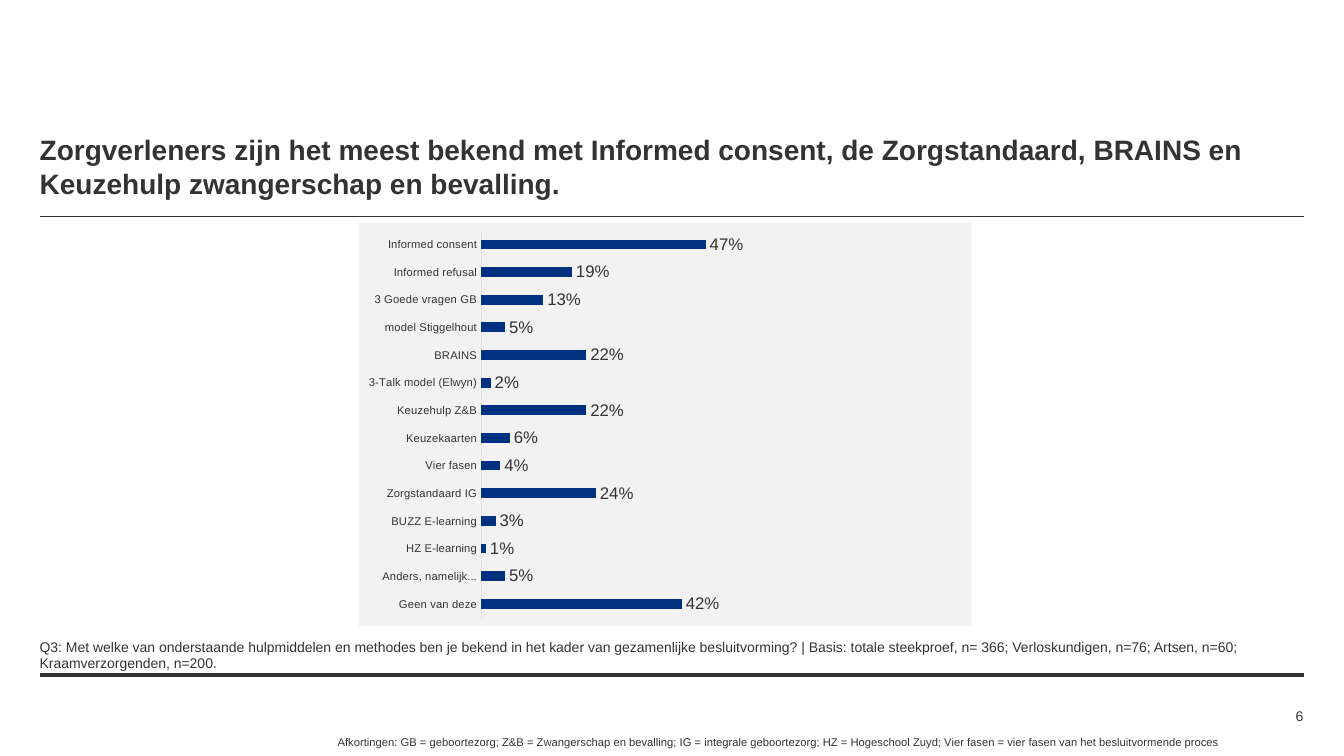
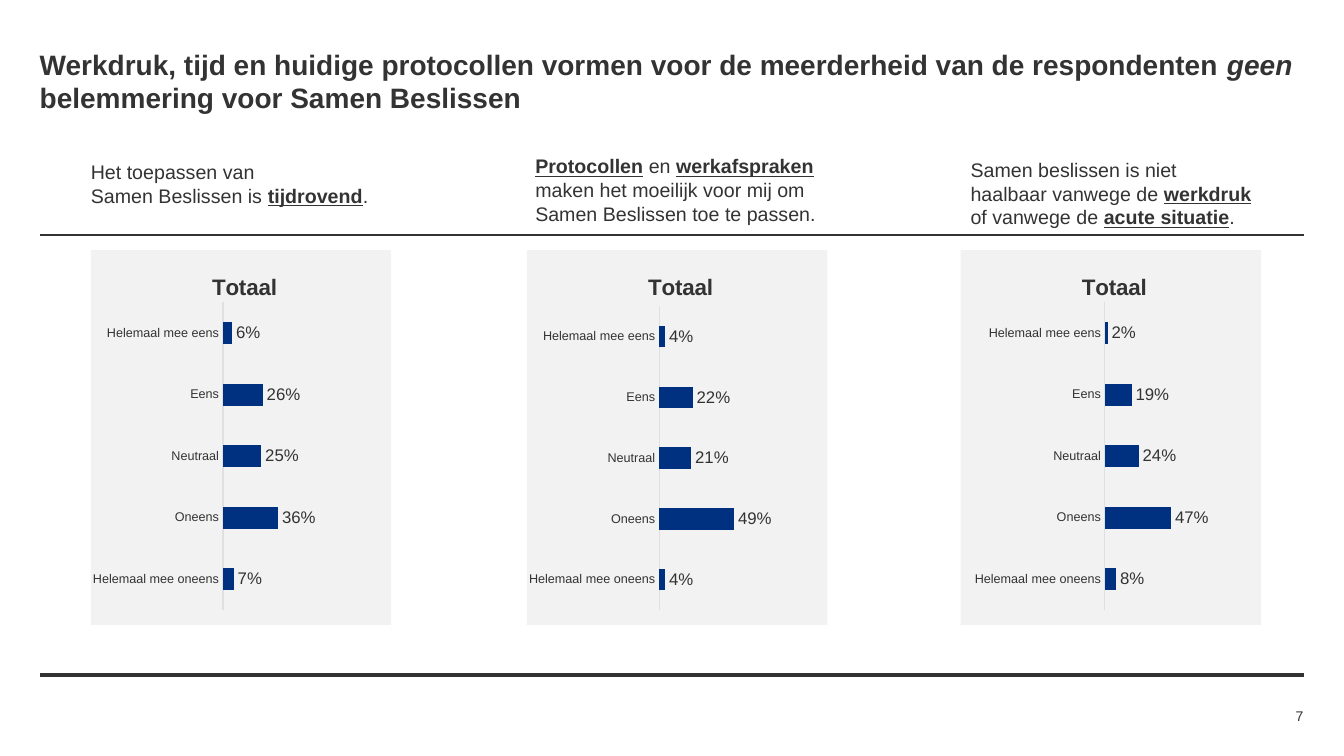
from pptx import Presentation, util as u
from pptx.chart import data as cd
from pptx.dml import color as col
from pptx.enum import chart as ec, shapes as es, text as et
from pptx.oxml import parse_xml
from pptx.oxml import ns

INK, NAVY, PANEL, AXIS = "333333", "003080", "F2F2F2", "E0E0E0"
FONT = "Arial"
LEFT, WIDTH = 1, 31.85
OPINIONS = ["Helemaal mee oneens", "Oneens", "Neutraal", "Eens", "Helemaal mee eens"]


def rgb(value):
    return col.RGBColor.from_string(value)


def cm(*lengths):
    return [u.Cm(n) for n in lengths]


def style(font, size, bold=False, colour=INK):
    font.name, font.size, font.bold = FONT, u.Pt(size), bold
    font.color.rgb = rgb(colour)


def bare_frame(tf, anchor):
    """Wrapping text frame without insets."""
    tf.word_wrap, tf.auto_size, tf.vertical_anchor = True, et.MSO_AUTO_SIZE.NONE, anchor
    tf.margin_left = tf.margin_right = tf.margin_top = tf.margin_bottom = 0


def add_runs(p, marked, size, base_bold, **emphasis):
    """Fill a paragraph; the parts between asterisks get the emphasis."""
    for i, part in enumerate(marked.split("*")):
        if part:
            r = p.add_run()
            r.text = part
            style(r.font, size, base_bold)
            if i % 2:
                for name, value in emphasis.items():
                    setattr(r.font, name, value)


def add_text(s, box, marked, size, anchor=et.MSO_ANCHOR.TOP, align=et.PP_ALIGN.LEFT):
    tf = s.shapes.add_textbox(*cm(*box)).text_frame
    bare_frame(tf, anchor)
    for i, line in enumerate(marked.split("\n")):
        p = tf.add_paragraph() if i else tf.paragraphs[0]
        p.alignment = align
        add_runs(p, line, size, False, bold=True, underline=True)


def add_rule(s, y, weight):
    line = s.shapes.add_connector(es.MSO_CONNECTOR.STRAIGHT, *cm(LEFT, y, LEFT + WIDTH, y))
    line.line.color.rgb, line.line.width = rgb(INK), u.Pt(weight)
    line._element.spPr.append(parse_xml(f'<a:effectLst {ns.nsdecls("a")}/>'))


def add_slide(prs, title, title_y, rule_y, number):
    """Slide with title, header rule, footer rule and page number."""
    s = prs.slides.add_slide(prs.slide_layouts[5])
    sp = s.shapes.title
    sp.left, sp.top, sp.width, sp.height = cm(LEFT, title_y, WIDTH, 1.12)
    bare_frame(sp.text_frame, et.MSO_ANCHOR.TOP)
    p = sp.text_frame.paragraphs[0]
    p.alignment = et.PP_ALIGN.LEFT
    add_runs(p, title, 20, True, italic=True)
    add_rule(s, 17, 3)
    add_rule(s, rule_y, 1)
    add_text(s, (30.15, 17.75, 2.7, 0.56), str(number), 10,
             et.MSO_ANCHOR.MIDDLE, et.PP_ALIGN.RIGHT)
    return s


def set_layout(parent, target="", **fractions):
    """Fix the place of a chart part as fractions of the chart."""
    for old in parent.xpath("c:layout"):
        parent.remove(old)
    inner = f'<c:layoutTarget val="{target}"/>' if target else ""
    inner += "".join(f'<c:{k}Mode val="edge"/>' for k in fractions if k in "xy")
    inner += "".join(f'<c:{k} val="{v}"/>' for k, v in fractions.items())
    following = parent.xpath("*[not(self::c:layout)][not(self::c:tx)]")[0]
    following.addprevious(parse_xml(
        f'<c:layout {ns.nsdecls("c")}><c:manualLayout>{inner}</c:manualLayout></c:layout>'))


def add_bars(s, box, cats, vals, plot, label_size, title=None, top_down=False):
    """Percentage bars on a grey panel."""
    data = cd.CategoryChartData(number_format="0%")
    data.categories = cats
    data.add_series("Series 1", vals)
    chart = s.shapes.add_chart(ec.XL_CHART_TYPE.BAR_CLUSTERED, *cm(*box), data).chart
    chart.has_legend = False
    style(chart.font, 10)
    chart.element.xpath("c:txPr")[0].addprevious(parse_xml(
        f'<c:spPr {ns.nsdecls("c", "a")}><a:solidFill><a:srgbClr val="{PANEL}"/></a:solidFill>'
        '<a:ln><a:noFill/></a:ln></c:spPr>'))

    # Title and plot area
    chart.has_title = title is not None
    if title:
        tf = chart.chart_title.text_frame
        tf.text = title
        style(tf.paragraphs[0].runs[0].font, 16, True)
        set_layout(chart.element.xpath("c:chart/c:title")[0], x=0.39, y=0.05)
    set_layout(chart.element.xpath("c:chart/c:plotArea")[0], "inner",
               **dict(zip("xywh", plot)))

    # Axes
    cat, val = chart.category_axis, chart.value_axis
    cat.major_tick_mark = cat.minor_tick_mark = ec.XL_TICK_MARK.NONE
    cat.reverse_order = top_down
    cat.format.line.color.rgb, cat.format.line.width = rgb(AXIS), u.Pt(0.75)
    style(cat.tick_labels.font, label_size)
    val.minimum_scale, val.maximum_scale = 0, 1
    val.has_major_gridlines = val.visible = False

    # Bars and value labels
    bars = chart.plots[0]
    bars.gap_width, bars.vary_by_categories = 182, False
    fill = bars.series[0].format.fill
    fill.solid()
    fill.fore_color.rgb = rgb(NAVY)
    bars.has_data_labels = True
    labels = bars.data_labels
    labels.show_value, labels.position = True, ec.XL_LABEL_POSITION.OUTSIDE_END
    labels.number_format, labels.number_format_is_linked = "0%", False
    style(labels.font, 12)


def familiarity_slide(prs):
    s = add_slide(prs, "Zorgverleners zijn het meest bekend met Informed consent, de Zorgstandaard, "
                  "BRAINS en Keuzehulp zwangerschap en bevalling.", 3.35, 5.46, 6)
    known = {
        "Informed consent": 0.47, "Informed refusal": 0.19, "3 Goede vragen GB": 0.13,
        "model Stiggelhout": 0.05, "BRAINS": 0.22, "3-Talk model (Elwyn)": 0.02,
        "Keuzehulp Z&B": 0.22, "Keuzekaarten": 0.06, "Vier fasen": 0.04,
        "Zorgstandaard IG": 0.24, "BUZZ E-learning": 0.03, "HZ E-learning": 0.01,
        "Anders, namelijk...": 0.05, "Geen van deze": 0.42,
    }
    add_bars(s, (9.04, 5.61, 15.44, 10.16), list(known), list(known.values()),
             (0.2, 0.02, 0.78, 0.96), 8, top_down=True)
    add_text(s, (LEFT, 16.08, WIDTH, 0.86),
             "Q3: Met welke van onderstaande hulpmiddelen en methodes ben je bekend in het kader van "
             "gezamenlijke besluitvorming? | Basis: totale steekproef, n= 366; Verloskundigen, n=76; "
             "Artsen, n=60; Kraamverzorgenden, n=200.", 10)
    add_text(s, (8.51, 18.4, 24.3, 0.58),
             "Afkortingen: GB = geboortezorg; Z&B = Zwangerschap en bevalling; IG = integrale "
             "geboortezorg; HZ = Hogeschool Zuyd; Vier fasen = vier fasen van het besluitvormende "
             "proces", 8, et.MSO_ANCHOR.MIDDLE)


def statement_column(s, x, text_dx, text_y, statement, vals, plot):
    """Statement above its chart; x is the left edge of the panel."""
    add_text(s, (x + text_dx, text_y, 7.24, 1.8), statement, 14)
    add_bars(s, (x, 6.3, 7.57, 9.45), OPINIONS, vals, plot, 9, title="Totaal")


def barriers_slide(prs):
    s = add_slide(prs, "Werkdruk, tijd en huidige protocollen vormen voor de meerderheid van de "
                  "respondenten *geen* belemmering voor Samen Beslissen", 1.19, 5.92, 7)
    columns = [
        (2.29, 0, 4.04, "Het toepassen van\nSamen Beslissen is *tijdrovend*.",
         (0.07, 0.36, 0.25, 0.26, 0.06), (0.44, 0.14, 0.51, 0.82)),
        (13.28, 0.21, 3.89, "*Protocollen* en *werkafspraken* maken het moeilijk voor mij om "
         "Samen Beslissen toe te passen.",
         (0.04, 0.49, 0.21, 0.22, 0.04), (0.44, 0.15, 0.51, 0.81)),
        (24.21, 0.25, 3.99, "Samen beslissen is niet haalbaar vanwege de *werkdruk* "
         "of vanwege de *acute situatie*.",
         (0.08, 0.47, 0.24, 0.19, 0.02), (0.48, 0.14, 0.47, 0.82)),
    ]
    for column in columns:
        statement_column(s, *column)


def main():
    prs = Presentation()
    prs.slide_width, prs.slide_height = cm(33.87, 19.05)
    familiarity_slide(prs)
    barriers_slide(prs)
    prs.save("out.pptx")


if __name__ == "__main__":
    main()
